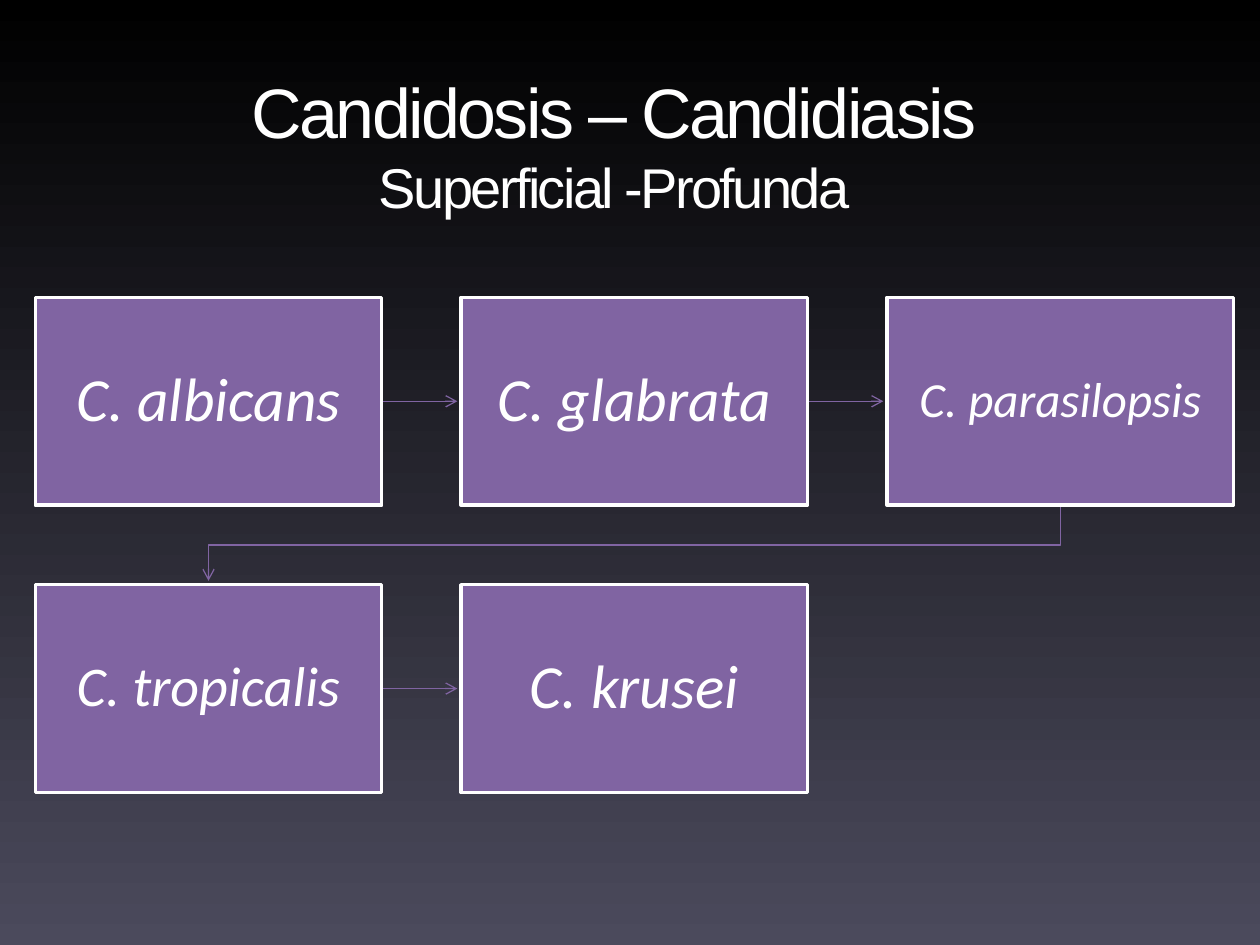
import pptx
import pptx.util
import pptx.dml.color
import pptx.enum.shapes
import pptx.enum.text
import pptx.oxml
import pptx.oxml.ns

Inches, Pt = pptx.util.Inches, pptx.util.Pt

# Content
TITLE = [("Candidosis – Candidiasis", 40), ("Superficial -Profunda", 32)]
SPECIES = [  # name, text size, inset
    ("C. albicans", 35, 0.27),
    ("C. glabrata", 35, 0.27),
    ("C. parasilopsis", 28, 0.22),
    ("C. tropicalis", 32, 0.25),
    ("C. krusei", 35, 0.27),
]
COLORS = {"top": "000000", "bottom": "4B4A5C", "purple": "8064A2", "white": "FFFFFF"}

# Grid
COLUMNS = 3
LEFT, TOP = 0.28, 2.36
WIDTH, HEIGHT = 2.75, 1.65
STEP_X, STEP_Y = 3.38, 2.28
GAP = 0.03  # space between an arrow tip and the next box


def color(name):
    return pptx.dml.color.RGBColor.from_string(COLORS[name])


def corner(index):
    row, column = divmod(index, COLUMNS)
    return LEFT + column * STEP_X, TOP + row * STEP_Y


def add_span(para, text, size, font, italic=False):
    span = para.add_run()
    span.text = text
    span.font.size = Pt(size)
    span.font.name = font
    span.font.italic = italic
    span.font.color.rgb = color("white")
    return span


def style_arrow(arrow):
    arrow.line.color.rgb = color("purple")
    arrow.line.width = Pt(0.75)
    line = arrow.line._get_or_add_ln()
    line.append(pptx.oxml.parse_xml(
        '<a:tailEnd %s type="arrow"/>' % pptx.oxml.ns.nsdecls("a")))


def add_arrow(page, index):
    """Join a box to the next one, bending where the row ends."""
    x, y = corner(index)
    next_x, next_y = corner(index + 1)
    if y == next_y:
        middle = y + HEIGHT / 2
        arrow = page.shapes.add_connector(
            pptx.enum.shapes.MSO_CONNECTOR.STRAIGHT,
            Inches(x + WIDTH), Inches(middle), Inches(next_x - GAP), Inches(middle))
        arrow._element.spPr.append(pptx.oxml.parse_xml(
            "<a:effectLst %s/>" % pptx.oxml.ns.nsdecls("a")))
    else:
        start_x, end_x = x + WIDTH / 2, next_x + WIDTH / 2
        bottom = y + HEIGHT
        bend = (bottom + next_y) / 2
        points = [(start_x, bend), (end_x, bend), (end_x, next_y - GAP)]
        builder = page.shapes.build_freeform(Inches(start_x), Inches(bottom))
        builder.add_line_segments([(Inches(a), Inches(b)) for a, b in points], close=False)
        arrow = builder.convert_to_shape()
        arrow.fill.background()
        arrow.shadow.inherit = False
    style_arrow(arrow)


def add_species(page, index, name, size, inset):
    x, y = corner(index)
    box = page.shapes.add_shape(
        pptx.enum.shapes.MSO_SHAPE.RECTANGLE,
        Inches(x), Inches(y), Inches(WIDTH), Inches(HEIGHT))
    box.shadow.inherit = False
    box.fill.solid()
    box.fill.fore_color.rgb = color("purple")
    box.line.color.rgb = color("white")
    box.line.width = Pt(2)
    frame = box.text_frame
    frame.word_wrap = True
    frame.vertical_anchor = pptx.enum.text.MSO_ANCHOR.MIDDLE
    frame.margin_left = frame.margin_right = Inches(inset)
    frame.margin_top = frame.margin_bottom = Inches(inset)
    para = frame.paragraphs[0]
    para.alignment = pptx.enum.text.PP_ALIGN.CENTER
    para.line_spacing = 0.9
    add_span(para, name, size, "Calibri", italic=True)


def add_title(page):
    box = page.shapes.add_textbox(Inches(1.19), Inches(0.79), Inches(7.37), Inches(0.71))
    frame = box.text_frame
    frame.word_wrap = True
    frame.vertical_anchor = pptx.enum.text.MSO_ANCHOR.MIDDLE
    para = frame.paragraphs[0]
    para.alignment = pptx.enum.text.PP_ALIGN.CENTER
    for number, (text, size) in enumerate(TITLE):
        if number:
            para.add_line_break()
        span = add_span(para, text, size, "Arial")
        span.font._element.set("spc", "-150")


def main():
    deck = pptx.Presentation()
    deck.slide_width, deck.slide_height = Inches(10), Inches(7.5)
    page = deck.slides.add_slide(deck.slide_layouts[6])

    # Background, dark at the top
    fill = page.background.fill
    fill.gradient()
    fill.gradient_angle = 270
    for stop, name, position in zip(fill.gradient_stops, ("top", "bottom"), (0, 1)):
        stop.color.rgb = color(name)
        stop.position = position

    # Title, then the chain of species
    add_title(page)
    for index, species in enumerate(SPECIES):
        if index + 1 < len(SPECIES):
            add_arrow(page, index)
        add_species(page, index, *species)

    deck.save("out.pptx")


if __name__ == "__main__":
    main()
